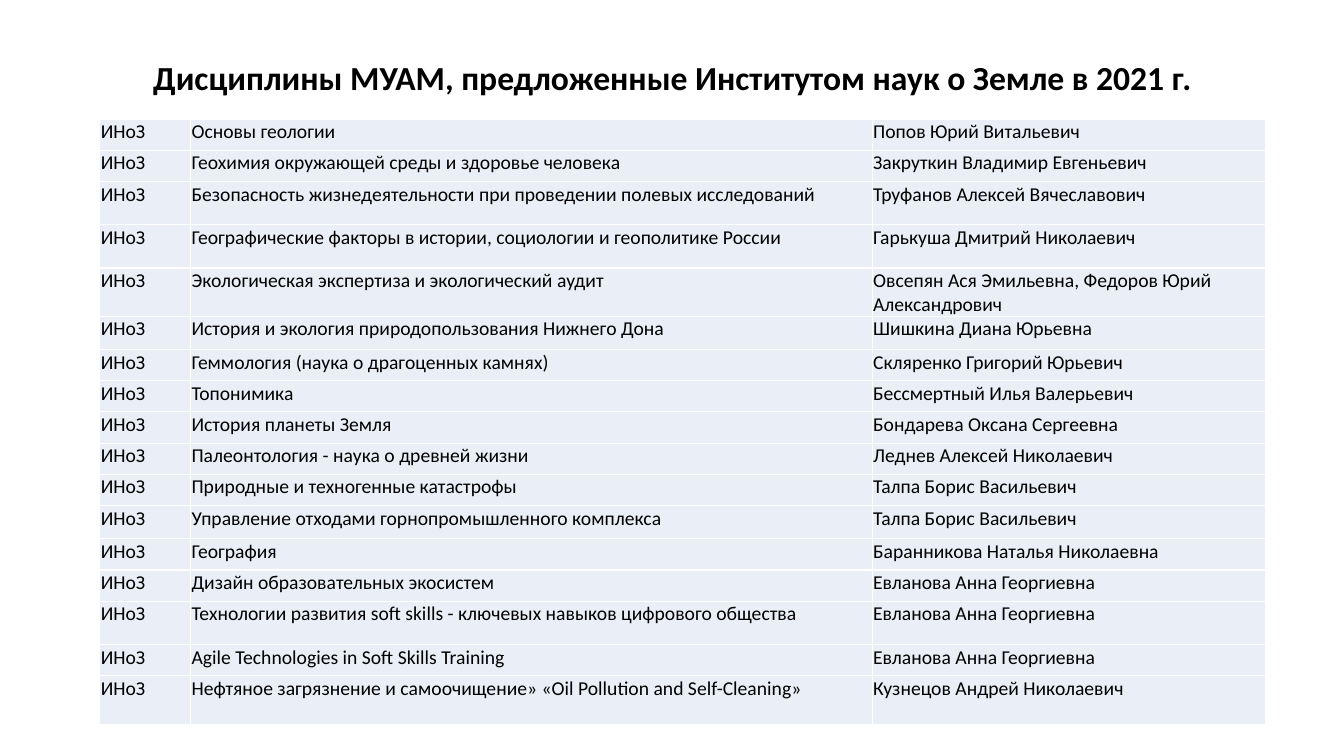
import pptx
import pptx.dml.color
import pptx.enum.text
import pptx.oxml.ns
import pptx.util
from lxml import etree

Inches = pptx.util.Inches
Pt = pptx.util.Pt

TITLE = "Дисциплины МУАМ, предложенные Институтом наук о Земле в 2021 г."
UNIT = "ИНоЗ"
# Row height, discipline, lecturer
COURSES = [
    (0.31, "Основы геологии", "Попов Юрий Витальевич"),
    (0.31, "Геохимия окружающей среды и здоровье человека", "Закруткин Владимир Евгеньевич"),
    (0.43, "Безопасность жизнедеятельности при проведении полевых исследований",
     "Труфанов Алексей Вячеславович"),
    (0.43, "Географические факторы в истории, социологии и геополитике России",
     "Гарькуша Дмитрий Николаевич"),
    (0.43, "Экологическая экспертиза и экологический аудит",
     "Овсепян Ася Эмильевна, Федоров Юрий Александрович"),
    (0.33, "История и экология природопользования Нижнего Дона", "Шишкина Диана Юрьевна"),
    (0.31, "Геммология (наука о драгоценных камнях)", "Скляренко Григорий Юрьевич"),
    (0.31, "Топонимика", "Бессмертный Илья Валерьевич"),
    (0.31, "История планеты Земля", "Бондарева Оксана Сергеевна"),
    (0.31, "Палеонтология - наука о древней жизни", "Леднев Алексей Николаевич"),
    (0.31, "Природные и техногенные катастрофы", "Талпа Борис Васильевич"),
    (0.33, "Управление отходами горнопромышленного комплекса", "Талпа Борис Васильевич"),
    (0.31, "География", "Баранникова Наталья Николаевна"),
    (0.31, "Дизайн образовательных экосистем", "Евланова Анна Георгиевна"),
    (0.43, "Технологии развития soft skills - ключевых навыков цифрового общества",
     "Евланова Анна Георгиевна"),
    (0.31, "Agile Technologies in Soft Skills Training", "Евланова Анна Георгиевна"),
    (0.48, "Нефтяное загрязнение и самоочищение» «Oil Pollution and Self-Cleaning»",
     "Кузнецов Андрей Николаевич"),
]


def color(code):
    return pptx.dml.color.RGBColor.from_string(code)


class Page:
    font = "Calibri"
    ink = "000000"
    tint = "EAEFF7"
    rule = "FFFFFF"

    def __init__(self, slide):
        self.slide = slide

    def add_text(self, para, text, size, bold=False):
        run = para.add_run()
        run.text = text
        run.font.name = self.font
        run.font.size = Pt(size)
        run.font.bold = bold
        run.font.color.rgb = color(self.ink)

    def title(self, text, left, top, width, height):
        box = self.slide.shapes.add_textbox(
            Inches(left), Inches(top), Inches(width), Inches(height))
        frame = box.text_frame
        frame.word_wrap = True
        frame.vertical_anchor = pptx.enum.text.MSO_ANCHOR.MIDDLE
        para = frame.paragraphs[0]
        para.alignment = pptx.enum.text.PP_ALIGN.CENTER
        para.line_spacing = 0.9
        self.add_text(para, text, 24, bold=True)

    def border(self, cell):
        """Draw a thin rule on all four sides; call before the fill is set."""
        qn = pptx.oxml.ns.qn
        props = cell._tc.get_or_add_tcPr()
        for side in ("a:lnL", "a:lnR", "a:lnT", "a:lnB"):
            line = etree.SubElement(props, qn(side), w=str(Pt(1)))
            fill = etree.SubElement(line, qn("a:solidFill"))
            etree.SubElement(fill, qn("a:srgbClr"), val=self.rule)

    def cell(self, cell, text):
        cell.margin_left = cell.margin_right = cell.margin_top = Inches(0.01)
        cell.margin_bottom = 0
        self.border(cell)
        cell.fill.solid()
        cell.fill.fore_color.rgb = color(self.tint)
        self.add_text(cell.text_frame.paragraphs[0], text, 14)

    def table(self, rows, left, top, widths, heights):
        table = self.slide.shapes.add_table(
            len(rows), len(widths), Inches(left), Inches(top),
            Inches(sum(widths)), Inches(sum(heights))).table
        table.first_row = table.horz_banding = False
        for col, width in zip(table.columns, widths):
            col.width = Inches(width)
        for row, height, texts in zip(table.rows, heights, rows):
            row.height = Inches(height)
            for cell, text in zip(row.cells, texts):
                self.cell(cell, text)


def main():
    deck = pptx.Presentation()
    deck.slide_width = Inches(13.33)
    deck.slide_height = Inches(7.5)
    page = Page(deck.slides.add_slide(deck.slide_layouts[6]))
    page.title(TITLE, 0.92, 0.4, 11.5, 0.78)
    page.table([(UNIT, course, name) for _, course, name in COURSES],
               0.99, 1.18, (0.9, 6.76, 3.9), [row[0] for row in COURSES])
    deck.save("out.pptx")


if __name__ == "__main__":
    main()
